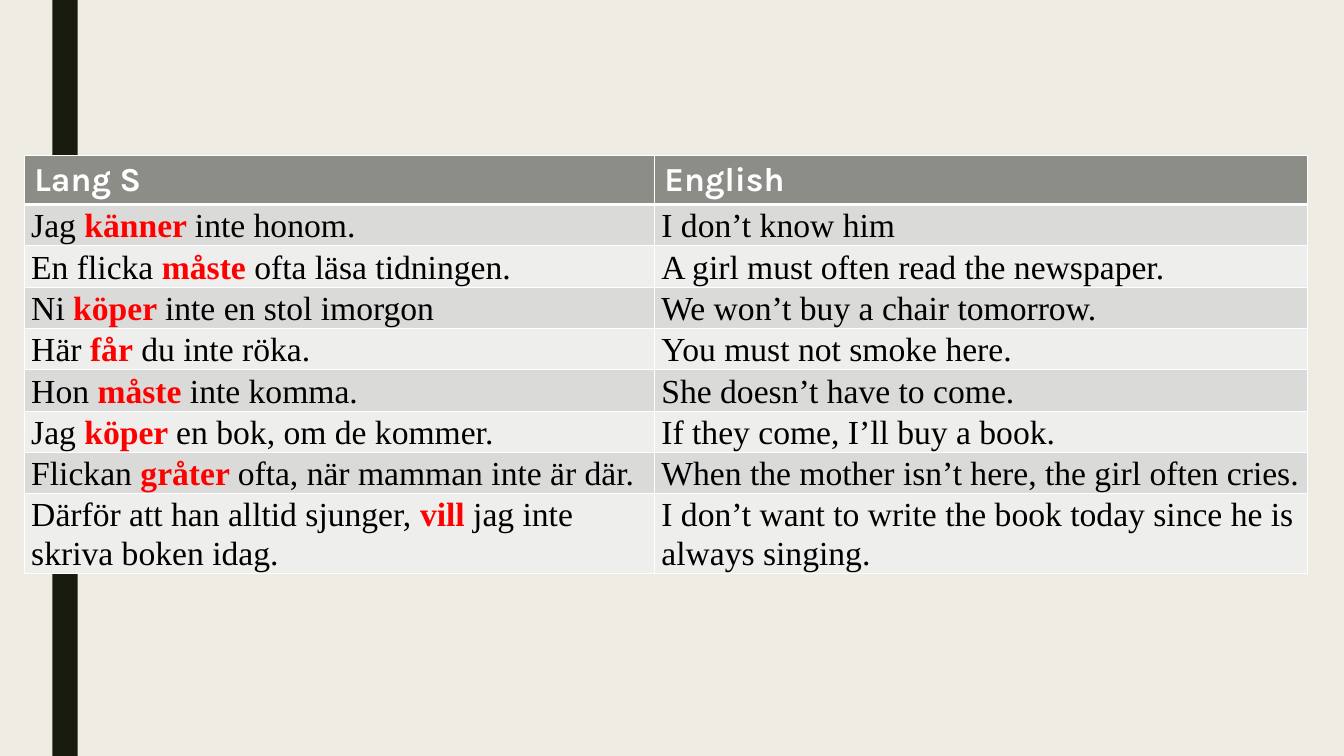
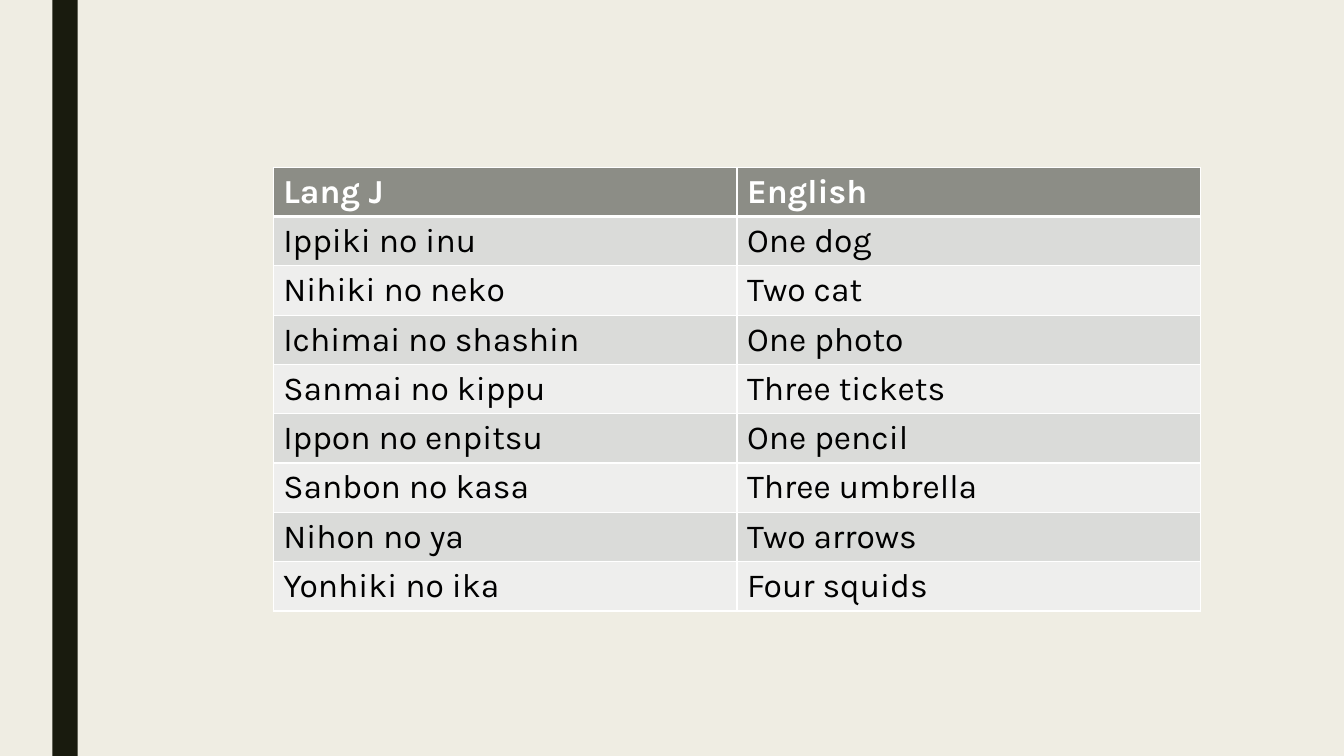
from dataclasses import dataclass

from lxml import etree
from pptx import Presentation
from pptx.dml import color
from pptx.enum import shapes, text
from pptx.oxml import ns
from pptx.util import Inches, Pt


@dataclass(frozen=True)
class Theme:
    background: str = "EFEDE3"
    bar: str = "191B0E"
    header: str = "8C8D86"
    bands: tuple = ("DADBD9", "EEEEED")
    white: str = "FFFFFF"
    ink: str = "000000"
    accent: str = "FF0000"
    font: str = "Karla"
    serif: str = "Times New Roman"
    size: int = 24
    rule: int = 1
    header_rule: int = 3


@dataclass(frozen=True)
class BodyStyle:
    font: str
    margin_x: float = 0.1
    margin_y: float = 0.05
    line_spacing: float = 1.0


THEME = Theme()
ROW_HEIGHT = 0.41
PLAIN = BodyStyle(THEME.font)
COMPACT = BodyStyle(THEME.serif, 0.07, 0, 1.07)

SWEDISH = [
    ("Lang S", "English"),
    ("Jag *känner *inte honom.", "I don’t know him"),
    ("En flicka *måste *ofta läsa tidningen.", "A girl must often read the newspaper."),
    ("Ni *köper *inte en stol imorgon", "We won’t buy a chair tomorrow."),
    ("Här *får* du inte röka.", "You must not smoke here."),
    ("Hon *måste *inte komma.", "She doesn’t have to come."),
    ("Jag *köper *en bok, om de kommer.", "If they come, I’ll buy a book."),
    ("Flickan *gråter *ofta, när mamman inte är där.",
     "When the mother isn’t here, the girl often cries."),
    ("Därför att han alltid sjunger, *vill* jag inte skriva boken idag.",
     "I don’t want to write the book today since he is always singing."),
]

JAPANESE = [
    ("Lang J", "English"),
    ("Ippiki no inu", "One dog"),
    ("Nihiki no neko", "Two cat"),
    ("Ichimai no shashin", "One photo"),
    ("Sanmai no kippu", "Three tickets"),
    ("Ippon no enpitsu", "One pencil"),
    ("Sanbon no kasa", "Three umbrella"),
    ("Nihon no ya", "Two arrows"),
    ("Yonhiki no ika", "Four squids"),
]


def rgb(value):
    return color.RGBColor.from_string(value)


def write(p, content, font=THEME.font, ink=THEME.ink, bold=False, spacing=1.0):
    p.line_spacing = spacing
    for i, part in enumerate(content.split("*")):
        marked = i % 2 == 1
        r = p.add_run()
        r.text = part
        r.font.name = font
        r.font.size = Pt(THEME.size)
        r.font.bold = bold or marked
        r.font.color.rgb = rgb(THEME.accent if marked else ink)


def border(cell, **widths):
    tc_pr = cell._tc.get_or_add_tcPr()
    for side in "LRTB":
        width = Pt(widths.get(side, THEME.rule))
        ln = etree.SubElement(tc_pr, ns.qn(f"a:ln{side}"), w=str(width))
        fill = etree.SubElement(ln, ns.qn("a:solidFill"))
        etree.SubElement(fill, ns.qn("a:srgbClr"), val=THEME.white)


class Deck:
    def __init__(self, theme):
        self.theme = theme
        self.prs = Presentation()
        self.prs.slide_width = Inches(13.33)
        self.prs.slide_height = Inches(7.5)
        fill = self.prs.slide_master.background.fill
        fill.solid()
        fill.fore_color.rgb = rgb(theme.background)
        self.s = None

    def new_slide(self):
        self.s = self.prs.slides.add_slide(self.prs.slide_layouts[6])
        self.side_bar()

    def side_bar(self):
        sp = self.s.shapes.add_shape(
            shapes.MSO_SHAPE.RECTANGLE, Inches(0.52), 0, Inches(0.25), self.prs.slide_height)
        sp.shadow.inherit = False
        sp.fill.solid()
        sp.fill.fore_color.rgb = rgb(self.theme.bar)
        sp.line.fill.background()

    def table(self, rows, left, top, widths, body, header_anchor=text.MSO_ANCHOR.MIDDLE):
        frame = self.s.shapes.add_table(
            len(rows), len(widths), Inches(left), Inches(top),
            Inches(sum(widths)), Inches(ROW_HEIGHT * len(rows)))
        table = frame.table
        for column, width in zip(table.columns, widths):
            column.width = Inches(width)
        for i, row in enumerate(rows):
            table.rows[i].height = Inches(ROW_HEIGHT)
            for j, content in enumerate(row):
                cell = table.cell(i, j)
                if i == 0:
                    self.header_cell(cell, content, header_anchor)
                else:
                    self.body_cell(cell, content, i, body)

    def header_cell(self, cell, content, anchor):
        cell.vertical_anchor = anchor
        border(cell, B=self.theme.header_rule)
        self.fill_cell(cell, self.theme.header)
        write(cell.text_frame.paragraphs[0], content, ink=self.theme.white, bold=True)

    def body_cell(self, cell, content, row, body):
        cell.vertical_anchor = text.MSO_ANCHOR.MIDDLE
        cell.margin_left = cell.margin_right = Inches(body.margin_x)
        cell.margin_top = cell.margin_bottom = Inches(body.margin_y)
        border(cell, T=self.theme.header_rule if row == 1 else self.theme.rule)
        self.fill_cell(cell, self.theme.bands[(row - 1) % 2])
        write(cell.text_frame.paragraphs[0], content, font=body.font,
              spacing=body.line_spacing)

    def fill_cell(self, cell, value):
        cell.fill.solid()
        cell.fill.fore_color.rgb = rgb(value)


def main():
    deck = Deck(THEME)
    deck.new_slide()
    deck.table(SWEDISH, 0.24, 1.54, (6.25, 6.48), COMPACT, text.MSO_ANCHOR.TOP)
    deck.new_slide()
    deck.table(JAPANESE, 2.71, 1.66, (4.6, 4.6), PLAIN)
    deck.prs.save("out.pptx")


if __name__ == "__main__":
    main()
